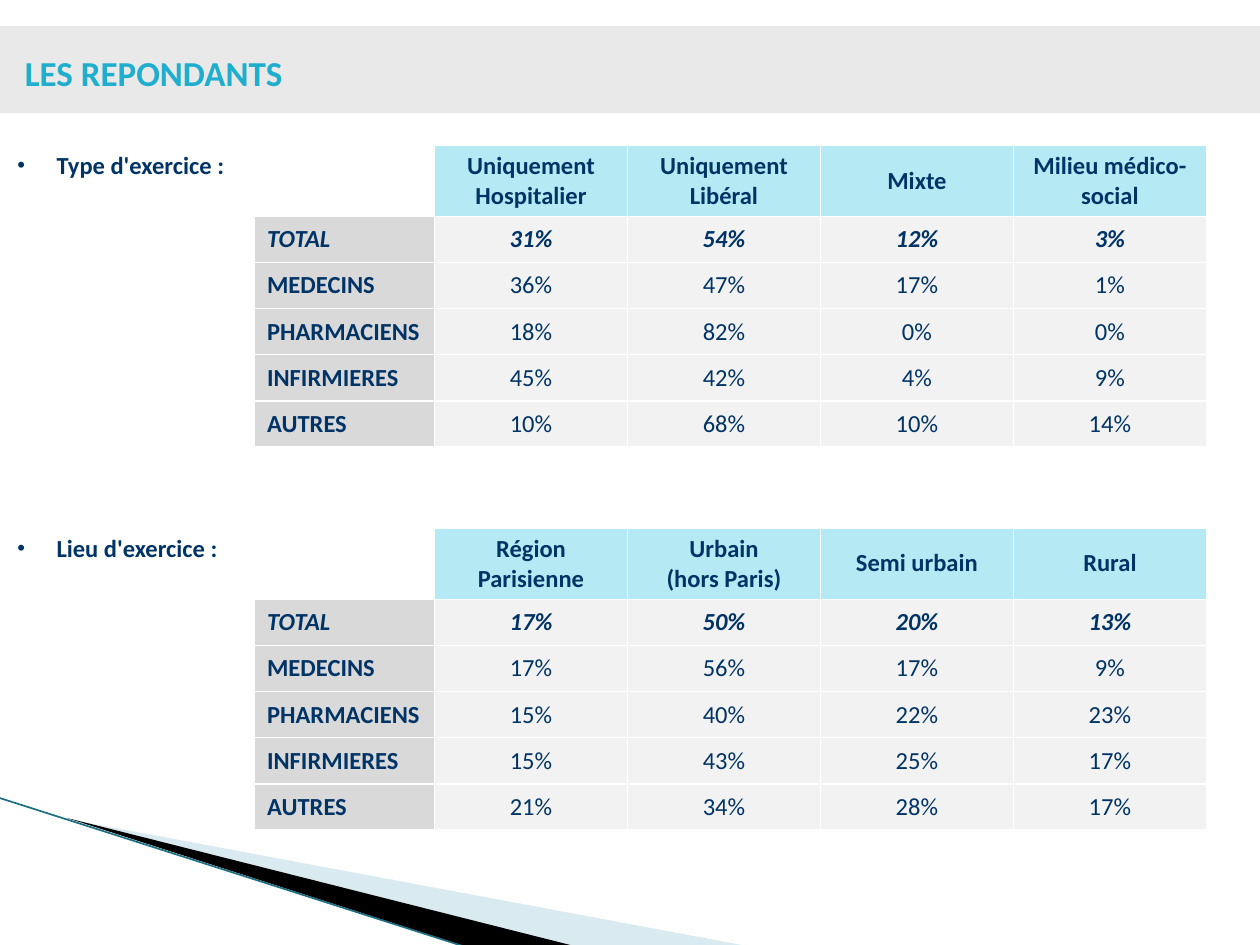
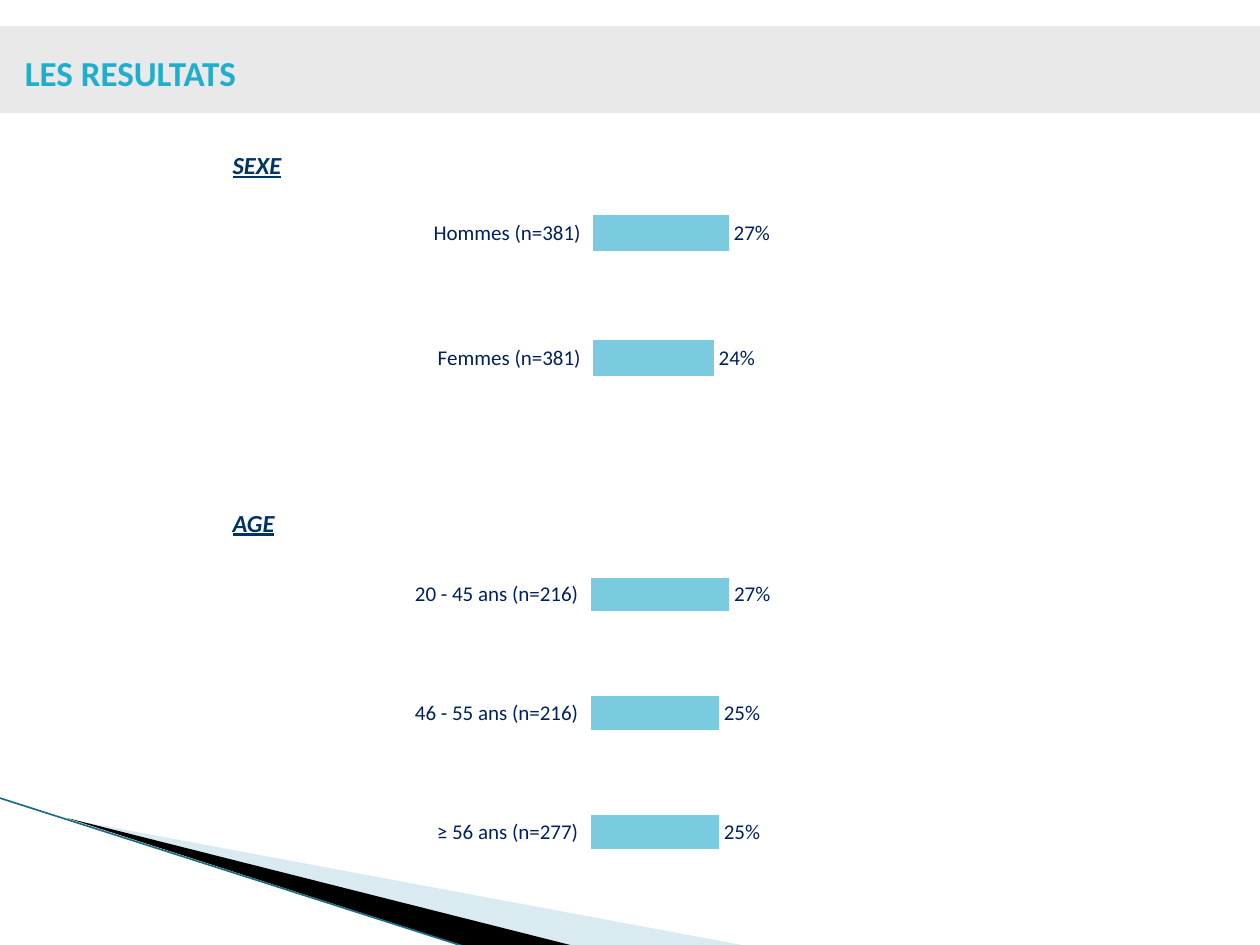
import lxml.etree
import pptx
import pptx.chart.data
import pptx.dml.color
import pptx.enum.chart
import pptx.enum.shapes
import pptx.enum.text
import pptx.oxml.ns
import pptx.util

Cm, Pt = pptx.util.Cm, pptx.util.Pt
qn = pptx.oxml.ns.qn

COLORS = {
    "title": "1FAECD", "band": "E9E9E9", "text": "003366", "chart text": "002060",
    "bar": "7ACBE0", "header": "B5E9F4", "row label": "D9D9D9", "value": "F2F2F2",
    "white": "FFFFFF", "black": "000000", "pale wedge": "A0CBDC", "edge": "1B6F82",
}
FONT = "Calibri"
WEDGES = [  # colour, opacity in percent, corners in cm
    ("pale wedge", 40, [(1.4, 16.52), (15.11, 19.08), (11.58, 19.08)]),
    ("black", 100, [(1.35, 16.49), (11.61, 19.08), (9.45, 19.1)]),
]
EDGE = (-0.03, 16.08, 9.42, 19.1)

PROFESSIONS = ["TOTAL", "MEDECINS", "PHARMACIENS", "INFIRMIERES", "AUTRES"]
RESPONDENTS = [
    {
        "label": "Type d'exercice :",
        "top": 2.72,
        "headers": ["Uniquement Hospitalier", "Uniquement Libéral", "Mixte", "Milieu médico-social"],
        "percents": [(31, 54, 12, 3), (36, 47, 17, 1), (18, 82, 0, 0), (45, 42, 4, 9), (10, 68, 10, 14)],
    },
    {
        "label": "Lieu d'exercice :",
        "top": 10.44,
        "headers": ["Région Parisienne", "Urbain\n(hors Paris)", "Semi urbain", "Rural"],
        "percents": [(17, 50, 20, 13), (17, 56, 17, 9), (15, 40, 22, 23), (15, 43, 25, 17), (21, 34, 28, 17)],
    },
]
RESULTS = [  # bars run from bottom to top; frame and plot are left, top, width, height
    {
        "label": "SEXE",
        "top": 2.72,
        "bars": {"Femmes (n=381)": 0.24, "Hommes (n=381)": 0.27},
        "frame": (7.72, 3.43, 16.43, 5.31),
        "plot": (0.258, 0.002, 0.616, 0.948),
    },
    {
        "label": "AGE",
        "top": 9.93,
        "bars": {"≥ 56 ans (n=277)": 0.25, "46 - 55 ans (n=216)": 0.25, "20 - 45 ans (n=216)": 0.27},
        "frame": (7.72, 10.62, 16.76, 7.59),
        "plot": (0.25, 0.022, 0.616, 0.948),
    },
]


def rgb(name):
    return pptx.dml.color.RGBColor.from_string(COLORS[name])


def paint(fill, name):
    fill.solid()
    fill.fore_color.rgb = rgb(name)


def style_font(font, size, color, name=FONT, bold=False, italic=False):
    font.size, font.name, font.bold, font.italic = Pt(size), name, bold, italic
    font.color.rgb = rgb(color)


def add_child(parent, tag, **attributes):
    return lxml.etree.SubElement(parent, qn(tag), attributes)


def add_wedge(slide, color, opacity, corners):
    points = [(Cm(x), Cm(y)) for x, y in corners]
    outline = slide.shapes.build_freeform(*points[0], scale=1.0)
    outline.add_line_segments(points[1:], close=True)
    wedge = outline.convert_to_shape()
    wedge.shadow.inherit = False
    wedge.line.fill.background()
    paint(wedge.fill, color)
    if opacity < 100:
        tint = wedge.fill._xPr.find(".//" + qn("a:srgbClr"))
        add_child(tint, "a:alpha", val=str(opacity * 1000))


def add_text_box(slide, left, top, width, height):
    box = slide.shapes.add_textbox(Cm(left), Cm(top), Cm(width), Cm(height))
    box.text_frame.word_wrap = True
    return box.text_frame


def add_base_slide(deck, title):
    """Blank slide with the corner wedges, the grey band and its title."""
    slide = deck.slides.add_slide(deck.slide_layouts[6])
    for wedge in WEDGES:
        add_wedge(slide, *wedge)
    edge = slide.shapes.add_connector(
        pptx.enum.shapes.MSO_CONNECTOR.STRAIGHT, *[Cm(value) for value in EDGE])
    edge.line.color.rgb = rgb("edge")
    edge.line.width = Pt(0.95)
    add_child(edge._element.spPr, "a:effectLst")

    band = slide.shapes.add_shape(
        pptx.enum.shapes.MSO_SHAPE.RECTANGLE, 0, Cm(0.53), deck.slide_width, Cm(1.75))
    band.shadow.inherit = False
    band.line.fill.background()
    paint(band.fill, "band")
    run = add_text_box(slide, 0.25, 0.91, 15.52, 1.02).paragraphs[0].add_run()
    run.text = title
    style_font(run.font, 20, "title", bold=True)
    return slide


def add_section_label(slide, label, left, top, width, bulleted):
    frame = add_text_box(slide, left, top, width, 0.99)
    frame.auto_size = pptx.enum.text.MSO_AUTO_SIZE.SHAPE_TO_FIT_TEXT
    paragraph = frame.paragraphs[0]
    paragraph.line_spacing = 1.3
    properties = paragraph._p.get_or_add_pPr()
    properties.set("marL", str(Cm(0.79 if bulleted else 1.14)))
    properties.set("indent", str(-Cm(0.79) if bulleted else 0))
    if bulleted:
        add_child(add_child(properties, "a:buClr"), "a:srgbClr", val=COLORS["text"])
        add_child(properties, "a:buSzPct", val="90000")
        add_child(properties, "a:buFont", typeface="Arial")
        add_child(properties, "a:buChar", char="•")
    run = paragraph.add_run()
    run.text = label
    style_font(run.font, 14, "text", bold=True, italic=not bulleted)
    run.font.underline = not bulleted


def fill_cell(cell, text, color, centred=True, bold=False, italic=False):
    properties = cell._tc.get_or_add_tcPr()
    for side in ("a:lnL", "a:lnR", "a:lnT", "a:lnB"):
        border = add_child(properties, side, w=str(Pt(1)))
        add_child(add_child(border, "a:solidFill"), "a:srgbClr", val=COLORS["white"])
    paint(cell.fill, color)
    cell.vertical_anchor = pptx.enum.text.MSO_ANCHOR.MIDDLE
    paragraph = cell.text_frame.paragraphs[0]
    if centred:
        paragraph.alignment = pptx.enum.text.PP_ALIGN.CENTER
    for number, line in enumerate(text.splitlines()):
        if number:
            paragraph.add_line_break()
        run = paragraph.add_run()
        run.text = line
        style_font(run.font, 14, "text", bold=bold, italic=italic)


def add_percent_table(slide, top, headers, percents):
    widths = [3.63] + [3.89] * len(headers)
    heights = [1.42] + [0.93] * len(PROFESSIONS)
    table = slide.shapes.add_table(
        len(heights), len(widths), Cm(5.13), Cm(top), Cm(sum(widths)), Cm(sum(heights))).table
    table.first_row = table.horz_banding = False
    for column, width in zip(table.columns, widths):
        column.width = Cm(width)
    for row, height in zip(table.rows, heights):
        row.height = Cm(height)

    fill_cell(table.cell(0, 0), "", "white")
    for column, header in enumerate(headers, 1):
        fill_cell(table.cell(0, column), header, "header", bold=True)
    for row, (profession, values) in enumerate(zip(PROFESSIONS, percents), 1):
        total = profession == "TOTAL"
        fill_cell(table.cell(row, 0), profession, "row label", centred=False, bold=True, italic=total)
        for column, value in enumerate(values, 1):
            fill_cell(table.cell(row, column), f"{value}%", "value", bold=total, italic=total)


def set_inner_plot(chart, box):
    """Fix the plot's inner area as fractions of the chart frame."""
    area = chart.element.xpath(".//c:plotArea")[0]
    for automatic in area.findall(qn("c:layout")):
        area.remove(automatic)
    layout = lxml.etree.Element(qn("c:layout"))
    area.insert(0, layout)
    manual = add_child(layout, "c:manualLayout")
    settings = [("layoutTarget", "inner"), ("xMode", "edge"), ("yMode", "edge")]
    for tag, value in settings + list(zip("xywh", box)):
        add_child(manual, "c:" + tag, val=str(value))


def add_bar_chart(slide, bars, frame, plot_box):
    chart_data = pptx.chart.data.CategoryChartData(number_format="0%")
    chart_data.categories = list(bars)
    chart_data.add_series("Series 1", list(bars.values()))
    chart = slide.shapes.add_chart(
        pptx.enum.chart.XL_CHART_TYPE.BAR_CLUSTERED, *[Cm(value) for value in frame], chart_data).chart
    chart.has_legend = chart.has_title = False
    style_font(chart.font, 10, "chart text", name="Arial")
    set_inner_plot(chart, plot_box)

    groups, scale = chart.category_axis, chart.value_axis
    groups.major_tick_mark = pptx.enum.chart.XL_TICK_MARK.OUTSIDE
    groups.format.line.fill.background()
    style_font(groups.tick_labels.font, 12, "chart text")
    scale.minimum_scale, scale.maximum_scale = 0, 1
    scale.has_major_gridlines = scale.visible = False

    plot = chart.plots[0]
    plot.gap_width = 250
    plot.vary_by_categories = False
    paint(plot.series[0].format.fill, "bar")
    plot.has_data_labels = True
    labels = plot.data_labels
    labels.show_value = True
    labels.number_format, labels.number_format_is_linked = "0%", False
    labels.position = pptx.enum.chart.XL_LABEL_POSITION.OUTSIDE_END
    style_font(labels.font, 12, "chart text")


def main():
    deck = pptx.Presentation()
    deck.slide_width, deck.slide_height = Cm(25.4), Cm(19.05)

    respondents = add_base_slide(deck, "LES REPONDANTS")
    for section in RESPONDENTS:
        add_section_label(respondents, section["label"], 0.1, section["top"], 23.19, bulleted=True)
        add_percent_table(respondents, section["top"] + 0.2, section["headers"], section["percents"])

    results = add_base_slide(deck, "LES RESULTATS")
    for section in RESULTS:
        add_section_label(results, section["label"], 3.3, section["top"], 22.1, bulleted=False)
        add_bar_chart(results, section["bars"], section["frame"], section["plot"])

    deck.save("out.pptx")


if __name__ == "__main__":
    main()
